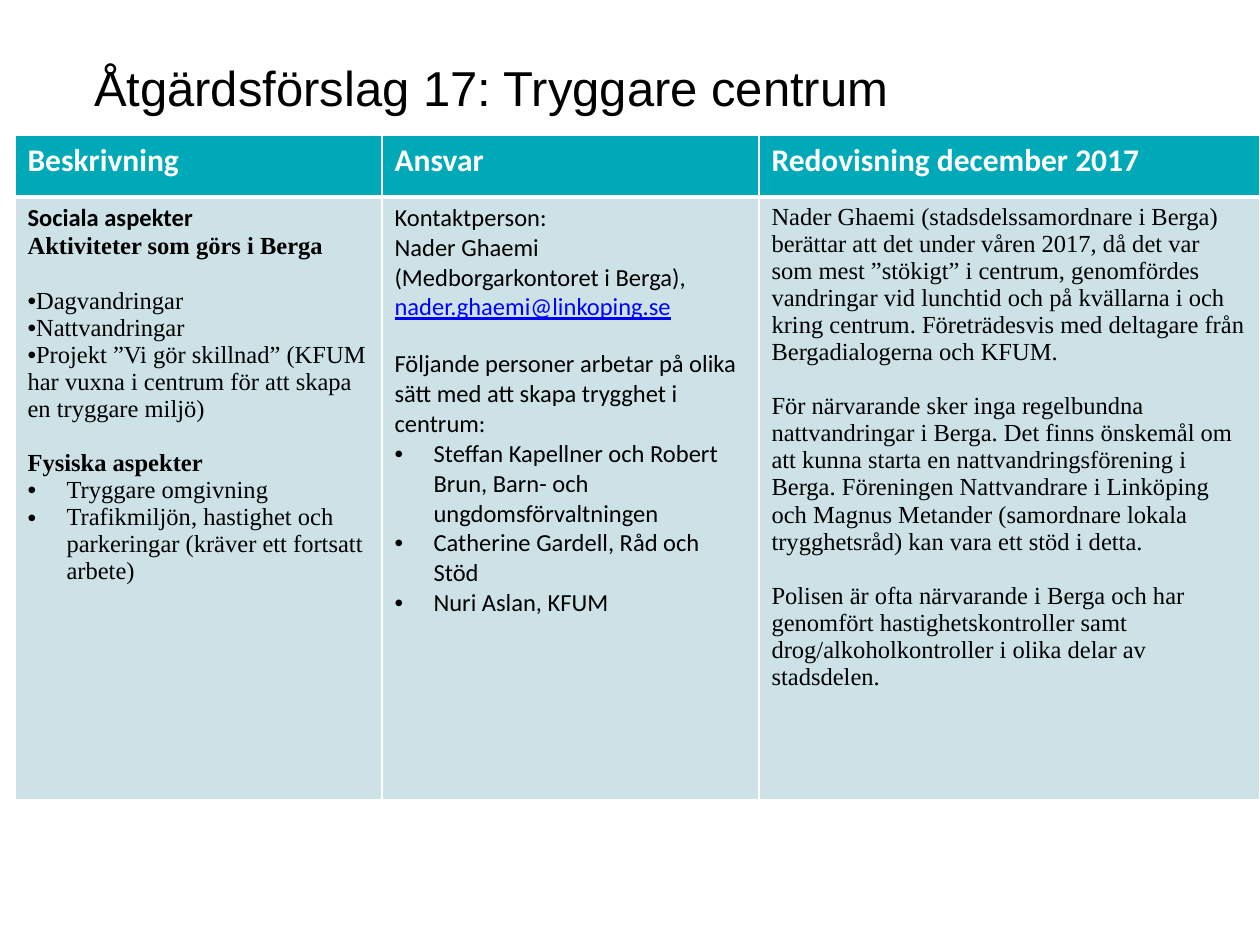
from lxml.etree import SubElement
from pptx import Presentation
from pptx.dml.color import RGBColor
from pptx.enum.text import MSO_ANCHOR, MSO_AUTO_SIZE, PP_ALIGN
from pptx.oxml import parse_xml
from pptx.oxml.ns import nsdecls, qn
from pptx.util import Emu, Pt

PX = 914400 // 126
SANS, SERIF = "Calibri", "Times New Roman"
TEAL, PALE, WHITE, BLACK, BLUE = "00A9B8", "CCE2E6", "FFFFFF", "000000", "0000FF"
GAP, HANG = 15.5, 39

HEADS = ["Beskrivning", "Ansvar", "Redovisning december 2017"]

# Each paragraph: its text, then marks among
# bold, sans, gap (space before), flush (bullet, no hang), item (hanging bullet), mail
TASKS = [
    ("Sociala aspekter", "bold sans"),
    ("Aktiviteter som görs i Berga", "bold"),
    ("Dagvandringar", "flush gap"),
    ("Nattvandringar", "flush"),
    ("Projekt ”Vi gör skillnad” (KFUM har vuxna i centrum för att skapa "
     "en tryggare miljö)", "flush"),
    ("Fysiska aspekter", "bold gap"),
    ("Tryggare omgivning", "item"),
    ("Trafikmiljön, hastighet och parkeringar (kräver ett fortsatt arbete)", "item"),
]
PEOPLE = [
    ("Kontaktperson:", "sans"),
    ("Nader Ghaemi (Medborgarkontoret i Berga),", "sans"),
    ("nader.ghaemi@linkoping.se", "sans mail"),
    ("Följande personer arbetar på olika sätt med att skapa trygghet i centrum:",
     "sans gap"),
    ("Steffan Kapellner och Robert Brun, Barn- och ungdomsförvaltningen", "sans item"),
    ("Catherine Gardell, Råd och Stöd", "sans item"),
    ("Nuri Aslan, KFUM", "sans item"),
]
REPORT = [
    ("Nader Ghaemi (stadsdelssamordnare i Berga) berättar att det under våren 2017, "
     "då det var som mest ”stökigt” i centrum, genomfördes vandringar vid lunchtid "
     "och på kvällarna i och kring centrum. Företrädesvis med deltagare från "
     "Bergadialogerna och KFUM.", ""),
    ("För närvarande sker inga regelbundna nattvandringar i Berga. Det finns önskemål "
     "om att kunna starta en nattvandringsförening i Berga. Föreningen Nattvandrare i "
     "Linköping och Magnus Metander (samordnare lokala trygghetsråd) kan vara ett stöd "
     "i detta.", "gap"),
    ("Polisen är ofta närvarande i Berga och har genomfört hastighetskontroller samt "
     "drog/alkoholkontroller i olika delar av stadsdelen.", "gap"),
]


def px(n):
    return Emu(n * PX)


def color(code):
    return RGBColor.from_string(code)


def style(font, name, size, code, bold=False):
    font.name, font.size, font.bold = name, Pt(size), bold
    font.color.rgb = color(code)


def bullet(para, left):
    props = para._p.get_or_add_pPr()
    props.set("marL", str(px(left)))
    props.set("indent", str(px(-HANG)))
    SubElement(props, qn("a:buFont")).set("typeface", "Arial")
    SubElement(props, qn("a:buChar")).set("char", "•")


def paint(cell, fill, top, bottom):
    """Fill the cell and give it white borders; top and bottom are in points."""
    cell.fill.solid()
    cell.fill.fore_color.rgb = color(fill)
    sides = {"L": 1, "R": 1, "T": top, "B": bottom}
    for spot, (side, width) in enumerate(sides.items()):
        line = parse_xml(
            f'<a:ln{side} {nsdecls("a")} w="{Pt(width)}"><a:solidFill>'
            f'<a:srgbClr val="{WHITE}"/></a:solidFill></a:ln{side}>')
        cell._tc.get_or_add_tcPr().insert(spot, line)


def write(frame, paras):
    for spot, (text, marks) in enumerate(paras):
        marks = marks.split()
        para = frame.paragraphs[0] if spot == 0 else frame.add_paragraph()
        para.text = text
        if "item" in marks or "flush" in marks:
            bullet(para, HANG if "item" in marks else 0)
        if "gap" in marks:
            para.space_before = Pt(GAP)
        font = para.runs[0].font
        mail = "mail" in marks
        style(font, SANS if "sans" in marks else SERIF, 14,
              BLUE if mail else BLACK, "bold" in marks)
        if mail:
            font.underline = True


def add_title(slide, left, top, width, height):
    title = slide.shapes.title
    title.left, title.top = px(left), px(top)
    title.width, title.height = px(width), px(height)
    frame = title.text_frame
    frame.text = "Åtgärdsförslag 17: Tryggare centrum"
    frame.auto_size = MSO_AUTO_SIZE.NONE
    frame.vertical_anchor = MSO_ANCHOR.TOP
    frame.margin_left = frame.margin_right = frame.margin_bottom = 0
    frame.margin_top = px(4)
    para = frame.paragraphs[0]
    para.alignment = PP_ALIGN.LEFT
    style(para.runs[0].font, "Arial", 28, BLACK)


def add_plan(slide, left, top, cols, rows):
    table = slide.shapes.add_table(
        len(rows), len(cols), px(left), px(top), px(sum(cols)), px(sum(rows))).table
    for col, width in zip(table.columns, cols):
        col.width = px(width)
    for row, height in zip(table.rows, rows):
        row.height = px(height)
    for spot, (head, paras) in enumerate(zip(HEADS, [TASKS, PEOPLE, REPORT])):
        cell = table.cell(0, spot)
        paint(cell, TEAL, 1, 3)
        cell.text_frame.text = head
        style(cell.text_frame.paragraphs[0].runs[0].font, SANS, 18, WHITE, True)
        cell = table.cell(1, spot)
        paint(cell, PALE, 3, 1)
        write(cell.text_frame, paras)


def main():
    deck = Presentation()
    deck.slide_width, deck.slide_height = px(1260), px(945)
    slide = deck.slides.add_slide(deck.slide_layouts[5])
    add_title(slide, 94, 53, 1066, 121)
    add_plan(slide, 15, 135, [367, 377, 501], [62, 603])
    deck.save("out.pptx")


if __name__ == "__main__":
    main()
